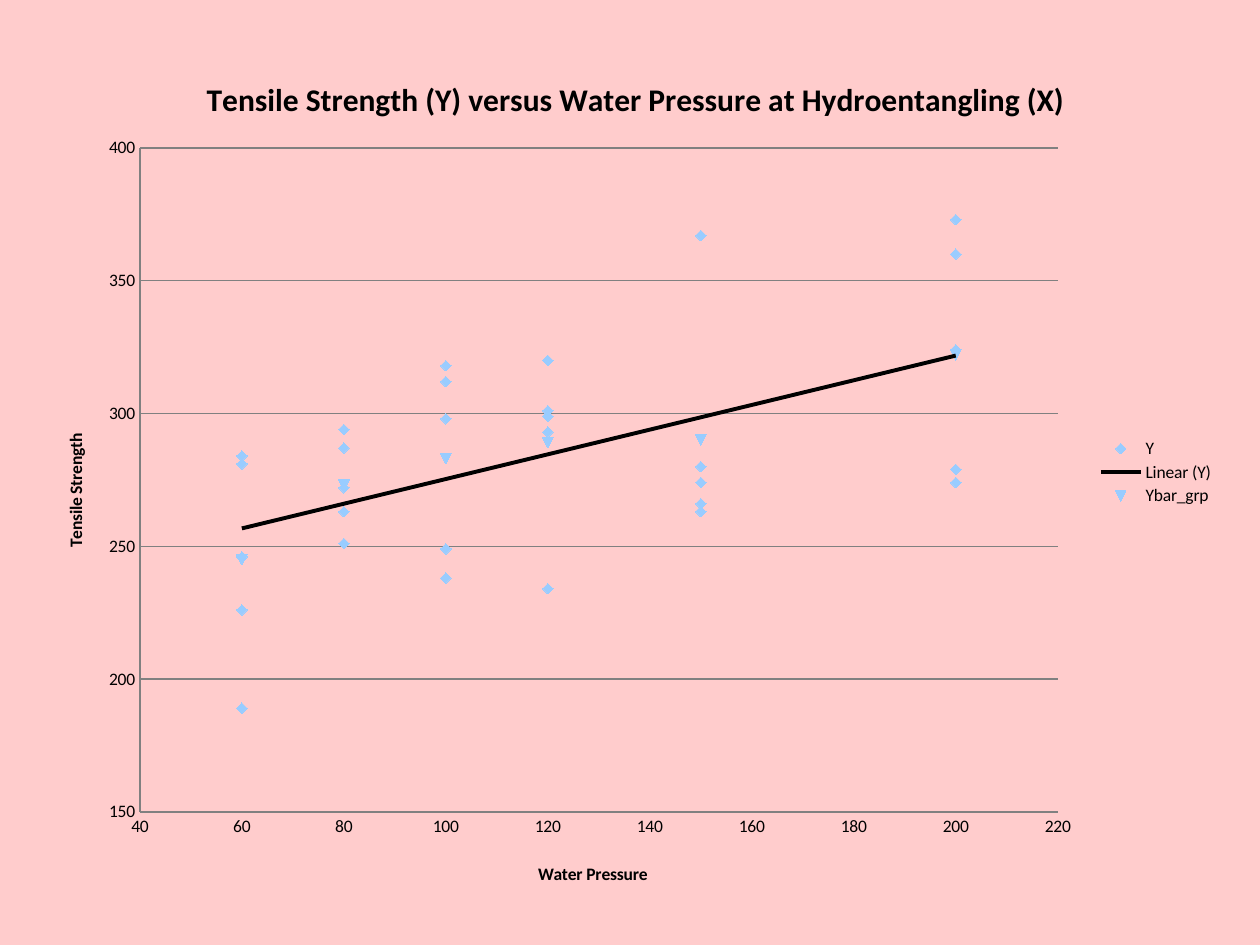
"""Build a slide with a scatter chart of tensile strength against water pressure."""
from lxml.etree import SubElement
from pptx import Presentation
from pptx.chart.data import XyChartData
from pptx.dml.color import RGBColor
from pptx.enum.chart import XL_CHART_TYPE as ChartType, XL_LEGEND_POSITION as LegendPosition
from pptx.enum.chart import XL_MARKER_STYLE as Marker, XL_TICK_MARK as Tick
from pptx.oxml import parse_xml
from pptx.oxml.ns import nsdecls, qn
from pptx.util import Emu, Pt

PX = 914400 // 126
COLORS = {"background": "FFCCCC", "text": "000000", "grid": "808080",
          "marker": "99CCFF", "trend": "000000"}
FONT = "Calibri"
TITLE = "Tensile Strength (Y) versus Water Pressure at Hydroentangling (X)"
STRENGTHS = {
    60: (226, 189, 246, 284, 281),
    80: (294, 251, 272, 287, 263),
    100: (318, 249, 238, 298, 312),
    120: (234, 293, 299, 320, 301),
    150: (266, 263, 367, 280, 274),
    200: (279, 360, 324, 373, 274),
}
GROUP_MEANS = {60: 245, 80: 273, 100: 283, 120: 289, 150: 290, 200: 322}
MARKERS = (Marker.DIAMOND, Marker.AUTOMATIC)
AXES = {
    "category_axis": ("Water Pressure", (535, 859),
                      {"minimum_scale": 40, "maximum_scale": 220, "major_unit": 20,
                       "has_major_gridlines": False}),
    "value_axis": ("Tensile Strength", (61, 430),
                   {"minimum_scale": 150, "maximum_scale": 400, "major_unit": 50,
                    "has_major_gridlines": True}),
}
TICKS = {"major_tick_mark": Tick.NONE, "minor_tick_mark": Tick.NONE}
CHART_BOX = (33, 39, 1194, 867)
TITLE_CORNER = (201, 72)
PLOT_BOX = (140, 148, 918, 664)
LEGEND_BOX = (1096, 435, 120, 75)


def color(name):
    return RGBColor.from_string(COLORS[name])


def set_values(target, values):
    for name, value in values.items():
        setattr(target, name, value)


def style_font(font, size, bold=False):
    set_values(font, {"name": FONT, "size": Pt(size), "bold": bold})
    font.color.rgb = color("text")


def style_line(line):
    line.color.rgb = color("grid")
    line.width = Pt(0.75)


def place(element, box, inner=False):
    """Give a chart part a manual layout from slide pixels."""
    for old in element.findall(qn("c:layout")):
        element.remove(old)
    layout = parse_xml(f"<c:layout {nsdecls('c')}><c:manualLayout/></c:layout>")
    left, top, width, height = CHART_BOX
    shares = ((box[0] - left) / width, (box[1] - top) / height,
              *(length / total for length, total in zip(box[2:], (width, height))))
    values = [("layoutTarget", "inner")] if inner else []
    values += [("xMode", "edge"), ("yMode", "edge")]
    values += [(key, f"{share:.4f}") for key, share in zip("xywh", shares)]
    for key, value in values:
        SubElement(layout[0], qn(f"c:{key}")).set("val", value)
    leading = [child for child in element if child.tag in (qn("c:tx"), qn("c:legendPos"))]
    element.insert(len(leading), layout)


def set_title(title, text, size, corner):
    title.text_frame.text = text
    style_font(title.text_frame.paragraphs[0].runs[0].font, size, True)
    place(title._element, corner)


def add_trend_line(series):
    trend = parse_xml(
        f'<c:trendline {nsdecls("c", "a")}><c:spPr><a:ln w="{Pt(2.25)}"><a:solidFill>'
        f'<a:srgbClr val="{COLORS["trend"]}"/></a:solidFill></a:ln></c:spPr>'
        '<c:trendlineType val="linear"/><c:dispRSqr val="0"/><c:dispEq val="0"/></c:trendline>')
    series._element.find(qn("c:xVal")).addprevious(trend)


def build_data():
    data = XyChartData()
    strengths, means = data.add_series("Y"), data.add_series("Ybar_grp")
    for pressure, values in STRENGTHS.items():
        for value in values:
            strengths.add_data_point(pressure, value)
            means.add_data_point(pressure, GROUP_MEANS[pressure])
    return data


def main():
    presentation = Presentation()
    presentation.slide_width, presentation.slide_height = Emu(1260 * PX), Emu(945 * PX)
    slide = presentation.slides.add_slide(presentation.slide_layouts[6])
    slide.background.fill.solid()
    slide.background.fill.fore_color.rgb = color("background")

    box = [Emu(length * PX) for length in CHART_BOX]
    chart = slide.shapes.add_chart(ChartType.XY_SCATTER, *box, build_data()).chart
    style_font(chart.font, 10)
    set_title(chart.chart_title, TITLE, 18, TITLE_CORNER)
    chart.plots[0].vary_by_categories = False
    place(chart._chartSpace.chart.plotArea, PLOT_BOX, inner=True)

    chart.has_legend = True
    set_values(chart.legend, {"position": LegendPosition.RIGHT, "include_in_layout": False})
    place(chart.legend._element, LEGEND_BOX)

    for name, (text, corner, scale) in AXES.items():
        axis = getattr(chart, name)
        set_values(axis, {**scale, **TICKS})
        set_title(axis.axis_title, text, 10, corner)
        style_line(axis.format.line)
    style_line(chart.value_axis.major_gridlines.format.line)

    for series, style in zip(chart.plots[0].series, MARKERS):
        series.format.line.fill.background()
        set_values(series.marker, {"style": style, "size": 6})
        series.marker.format.fill.solid()
        series.marker.format.fill.fore_color.rgb = color("marker")
        series.marker.format.line.color.rgb = color("marker")
    add_trend_line(chart.plots[0].series[0])
    presentation.save("out.pptx")


if __name__ == "__main__":
    main()
